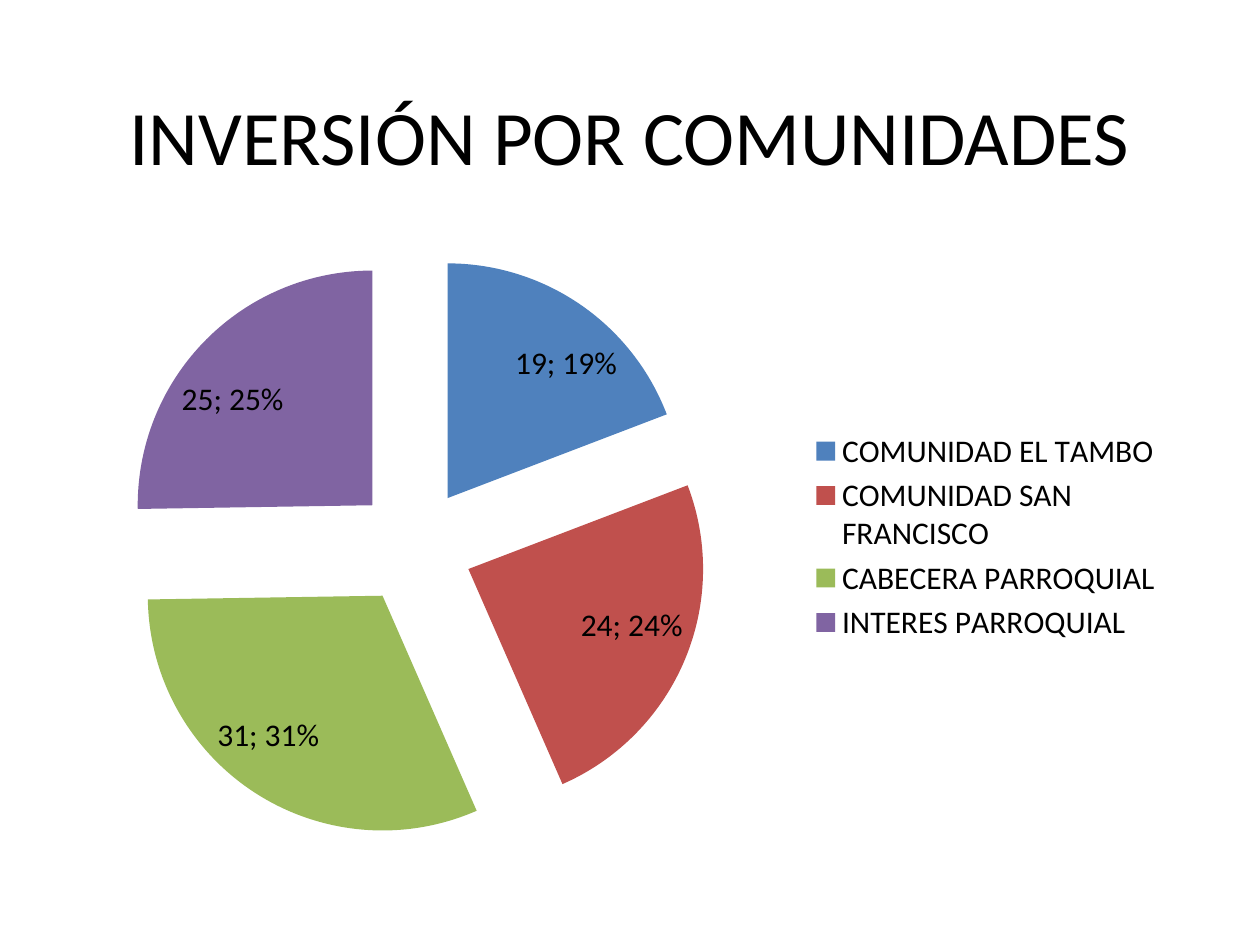
from lxml import etree
from pptx import Presentation
from pptx.chart.data import CategoryChartData
from pptx.dml.color import RGBColor
from pptx.enum.chart import XL_CHART_TYPE as ChartType
from pptx.enum.chart import XL_LABEL_POSITION as LabelPosition
from pptx.enum.chart import XL_LEGEND_POSITION as LegendPosition
from pptx.enum.text import MSO_ANCHOR as Anchor
from pptx.enum.text import PP_ALIGN as Align
from pptx.oxml.ns import qn
from pptx.util import Pt

BLACK = RGBColor(0x00, 0x00, 0x00)
BLUE = RGBColor(0x4F, 0x81, 0xBD)
RED = RGBColor(0xC0, 0x50, 0x4D)
GREEN = RGBColor(0x9B, 0xBB, 0x59)
PURPLE = RGBColor(0x80, 0x64, 0xA2)
FONT = "Calibri"

communities = [
    ("COMUNIDAD EL TAMBO", 19, BLUE),
    ("COMUNIDAD SAN FRANCISCO", 24, RED),
    ("CABECERA PARROQUIAL", 31, GREEN),
    ("INTERES PARROQUIAL", 25, PURPLE),
]
names, shares, colors = zip(*communities)

prs = Presentation()
prs.slide_width, prs.slide_height = Pt(720), Pt(540)
slide = prs.slides.add_slide(prs.slide_layouts[6])

# Investment pie
investment = CategoryChartData(number_format="0")
investment.categories = names
investment.add_series("Series 1", shares)
chart = slide.shapes.add_chart(
    ChartType.PIE_EXPLODED, Pt(36.75), Pt(122.5), Pt(635), Pt(368.5), investment
).chart
chart.has_title = False
chart.font.name = FONT
chart.font.size = Pt(18)
chart.font.color.rgb = BLACK
chart.has_legend = True
chart.legend.position = LegendPosition.RIGHT
chart.legend.include_in_layout = False

# Plot area as fractions of the chart
plot_area = chart._chartSpace.find(".//" + qn("c:plotArea"))
for old_layout in plot_area.findall(qn("c:layout")):
    plot_area.remove(old_layout)
layout = etree.Element(qn("c:layout"))
manual = etree.SubElement(layout, qn("c:manualLayout"))
for tag, value in [
    ("layoutTarget", "inner"), ("xMode", "edge"), ("yMode", "edge"),
    ("x", "0.05"), ("y", "0.06"), ("w", "0.53"), ("h", "0.91"),
]:
    etree.SubElement(manual, qn("c:" + tag)).set("val", value)
plot_area.insert(0, layout)

pie = chart.plots[0]
pie.vary_by_categories = True
series = pie.series[0]
for index, color in enumerate(colors):
    fill = series.points[index].format.fill
    fill.solid()
    fill.fore_color.rgb = color
for explosion in series._element.iter(qn("c:explosion")):
    explosion.set("val", "25")

pie.has_data_labels = True
labels = pie.data_labels
labels.show_value = True
labels.show_percentage = True
labels.position = LabelPosition.BEST_FIT
separator = etree.Element(qn("c:separator"))
separator.text = "; "
labels._element.find(qn("c:showBubbleSize")).addnext(separator)

# Title
title = slide.shapes.add_textbox(Pt(54), Pt(26), Pt(612), Pt(102)).text_frame
title.word_wrap = True
title.vertical_anchor = Anchor.MIDDLE
heading = title.paragraphs[0]
heading.alignment = Align.CENTER
run = heading.add_run()
run.text = "INVERSIÓN POR COMUNIDADES"
run.font.name = FONT
run.font.size = Pt(44)
run.font.color.rgb = BLACK

prs.save("out.pptx")
